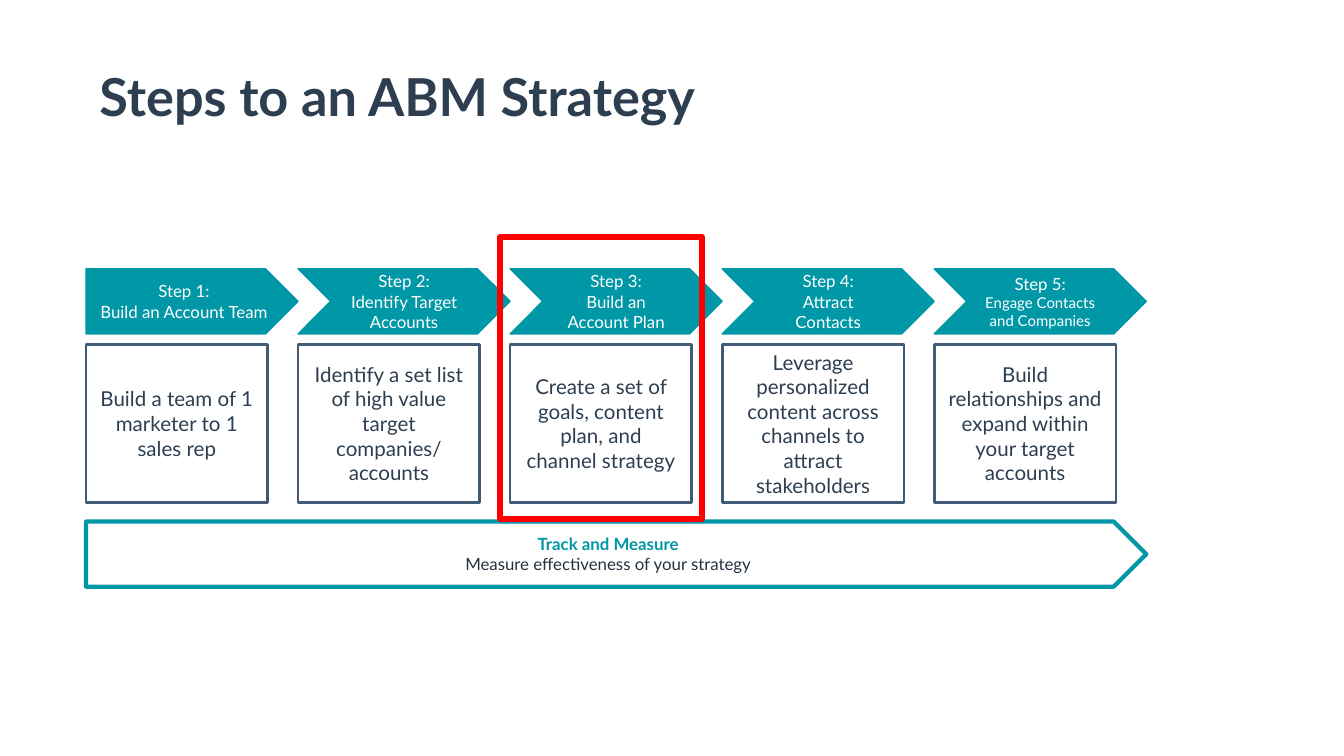
from pptx import Presentation
from pptx.dml.color import RGBColor
from pptx.enum import shapes, text
from pptx.util import Pt

TITLE = "Steps to an ABM Strategy"
STEPS = [
    ("Step 1:", "Build an Account Team", 9,
     "Build a team of 1 marketer to 1 sales rep"),
    ("Step 2:", "Identify Target Accounts", 9,
     "Identify a set list of high value target companies/ accounts"),
    ("Step 3:", "Build an Account Plan", 9,
     "Create a set of goals, content plan, and channel strategy"),
    ("Step 4:", "Attract Contacts", 9,
     "Leverage personalized content across channels to attract stakeholders"),
    ("Step 5:", "Engage Contacts and Companies", 8,
     "Build relationships and expand within your target accounts"),
]
TRACKING = ("Track and Measure", "Measure effectiveness of your strategy")
HIGHLIGHTED = 2

FONT = "Lato"
NAVY = RGBColor(0x2D, 0x3E, 0x50)
DARK = RGBColor(0x25, 0x33, 0x42)
SLATE = RGBColor(0x42, 0x5B, 0x76)
TEAL = RGBColor(0x00, 0x97, 0xA7)
RED = RGBColor(0xFF, 0x00, 0x00)
WHITE = RGBColor(0xFF, 0xFF, 0xFF)

LEFT, PITCH = 46.1, 113.6
ARROW_TOP, ARROW_HEIGHT = 144, 34.9
CARD_TOP, CARD_WIDTH, CARD_HEIGHT = 184.6, 97.4, 84.5
TRACK_TOP = 279.4
FRAME_MARGIN, FRAME_TOP, FRAME_HEIGHT = 5.4, 126.9, 151.2

PRESET = shapes.MSO_SHAPE


def set_margins(frame):
    frame.margin_left = frame.margin_right = Pt(7.2)
    frame.margin_top = frame.margin_bottom = Pt(7.2)
    frame.word_wrap = True


def style(paragraph, size, color, bold=False, align=text.PP_ALIGN.CENTER):
    paragraph.alignment = align
    font = paragraph.font
    font.name, font.size, font.bold = FONT, Pt(size), bold
    font.color.rgb = color


def add_block(preset, left, top, width, height, line, weight, fill=None):
    block = slide.shapes.add_shape(preset, Pt(left), Pt(top), Pt(width), Pt(height))
    block.shadow.inherit = False
    if fill is None:
        block.fill.background()
    else:
        block.fill.solid()
        block.fill.fore_color.rgb = fill
    block.line.color.rgb = line
    block.line.width = Pt(weight)
    frame = block.text_frame
    set_margins(frame)
    frame.vertical_anchor = text.MSO_ANCHOR.MIDDLE
    return frame


deck = Presentation()
deck.slide_width, deck.slide_height = Pt(720), Pt(405)
slide = deck.slides.add_slide(deck.slide_layouts[5])

title = slide.shapes.title
title.left, title.top, title.width, title.height = Pt(LEFT), Pt(27.4), Pt(394.6), Pt(50.4)
heading = title.text_frame
heading.text = TITLE
set_margins(heading)
heading.auto_size = text.MSO_AUTO_SIZE.NONE
heading.vertical_anchor = text.MSO_ANCHOR.TOP
style(heading.paragraphs[0], 28, NAVY, True, text.PP_ALIGN.LEFT)

for index, (number, action, action_size, detail) in enumerate(STEPS):
    left = LEFT + index * PITCH
    preset = PRESET.CHEVRON if index else PRESET.PENTAGON
    arrow = add_block(preset, left, ARROW_TOP, PITCH, ARROW_HEIGHT, TEAL, 0.75, TEAL)
    label = arrow.paragraphs[0]
    style(label, 9, WHITE)
    label.add_run().text = number
    label.add_line_break()
    action_run = label.add_run()
    action_run.text = action
    if action_size != 9:
        action_run.font.size = Pt(action_size)

for index, (number, action, action_size, detail) in enumerate(STEPS):
    card = add_block(PRESET.RECTANGLE, LEFT + index * PITCH, CARD_TOP,
                     CARD_WIDTH, CARD_HEIGHT, SLATE, 1.5)
    card.text = detail
    style(card.paragraphs[0], 11, NAVY)

track = add_block(PRESET.PENTAGON, LEFT, TRACK_TOP, len(STEPS) * PITCH,
                  ARROW_HEIGHT, TEAL, 2.25)
track.text = "\n".join(TRACKING)
style(track.paragraphs[0], 9, TEAL, True)
style(track.paragraphs[1], 9, DARK)

add_block(PRESET.RECTANGLE, LEFT + HIGHLIGHTED * PITCH - FRAME_MARGIN, FRAME_TOP,
          CARD_WIDTH + 2 * FRAME_MARGIN, FRAME_HEIGHT, RED, 3)

deck.save("out.pptx")
